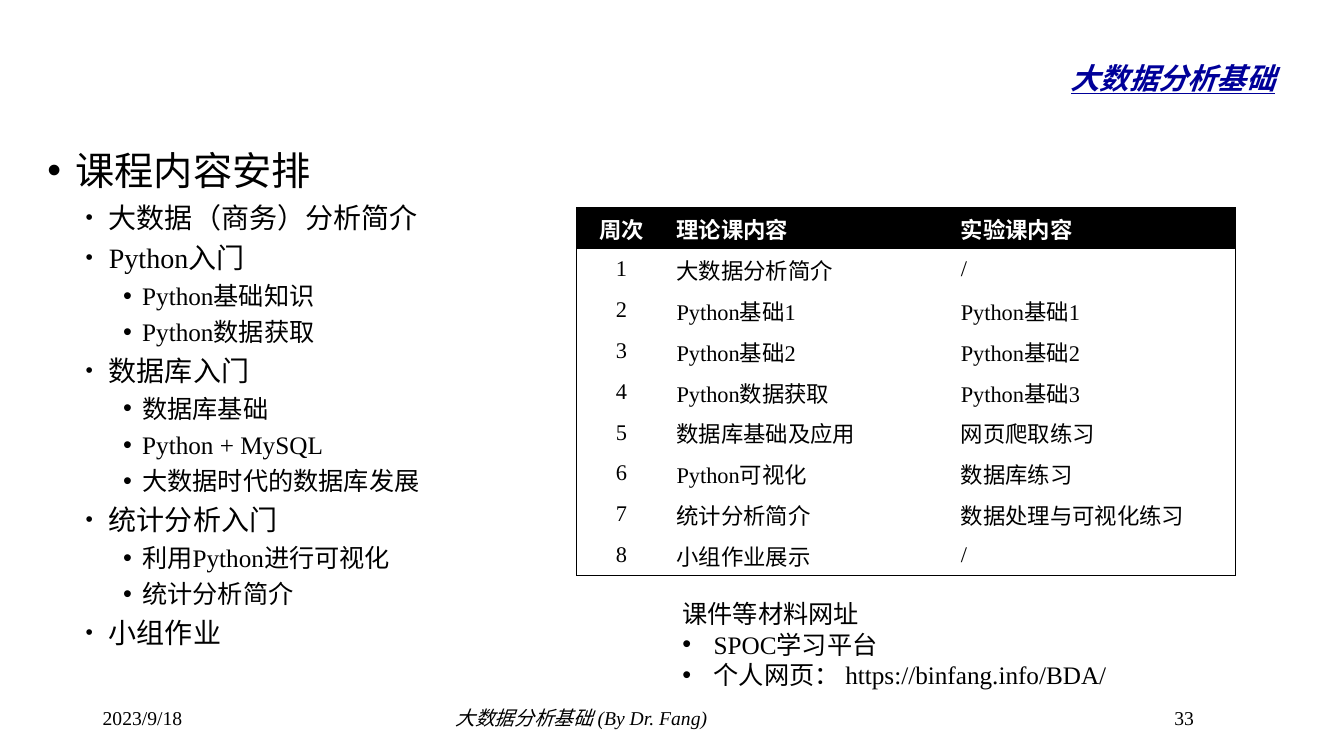
from dataclasses import dataclass

from lxml.etree import SubElement
from pptx import Presentation
from pptx.dml.color import RGBColor
from pptx.enum.text import MSO_ANCHOR, MSO_AUTO_SIZE, PP_ALIGN
from pptx.oxml.ns import qn
from pptx.util import Inches, Pt


@dataclass(frozen=True)
class Theme:
    font: str = "Times New Roman"
    ink: str = "000000"
    paper: str = "FFFFFF"
    heading: str = "000099"
    title: int = 36
    topic: int = 28
    section: int = 20
    detail: int = 18
    table: int = 16
    footer: int = 14
    border: float = 0.75


THEME = Theme()

OUTLINE_LEVELS = [
    (THEME.topic, 0.28, -0.28, 100),
    (THEME.section, 0.61, -0.23, 75),
    (THEME.detail, 0.94, -0.19, 100),
]
OUTLINE = [
    (0, "课程内容安排"),
    (1, "大数据（商务）分析简介"),
    (1, "Python入门"),
    (2, "Python基础知识"),
    (2, "Python数据获取"),
    (1, "数据库入门"),
    (2, "数据库基础"),
    (2, "Python + MySQL"),
    (2, "大数据时代的数据库发展"),
    (1, "统计分析入门"),
    (2, "利用Python进行可视化"),
    (2, "统计分析简介"),
    (1, "小组作业"),
]
SCHEDULE = [
    ("周次", "理论课内容", "实验课内容"),
    ("1", "大数据分析简介", "/"),
    ("2", "Python基础1", "Python基础1"),
    ("3", "Python基础2", "Python基础2"),
    ("4", "Python数据获取", "Python基础3"),
    ("5", "数据库基础及应用", "网页爬取练习"),
    ("6", "Python可视化", "数据库练习"),
    ("7", "统计分析简介", "数据处理与可视化练习"),
    ("8", "小组作业展示", "/"),
]
COLUMN_WIDTHS = [0.89, 2.82, 2.82]
MATERIALS = ["课件等材料网址", "SPOC学习平台", "个人网页： https://binfang.info/BDA/"]


def style(paragraph, size, color=THEME.ink, bold=False, italic=False):
    font = paragraph.font
    font.name = THEME.font
    font.size = Pt(size)
    font.color.rgb = RGBColor.from_string(color)
    font.bold = bold
    font.italic = italic


def add_bullet(paragraph, margin, indent, percent=100):
    properties = paragraph._p.get_or_add_pPr()
    properties.set("marL", str(Inches(margin)))
    properties.set("indent", str(Inches(indent)))
    SubElement(properties, qn("a:buSzPct"), val=str(percent * 1000))
    SubElement(properties, qn("a:buFont"), typeface="Arial")
    SubElement(properties, qn("a:buChar"), char="•")


def place(shape, left, top, width, height):
    shape.left, shape.top = Inches(left), Inches(top)
    shape.width, shape.height = Inches(width), Inches(height)


def fill_lines(frame, lines):
    for index, line in enumerate(lines):
        paragraph = frame.paragraphs[0] if index == 0 else frame.add_paragraph()
        paragraph.text = line
    return frame.paragraphs


def add_title(slide, text):
    title = slide.shapes.title
    place(title, 1.94, 0.05, 10.81, 1.1)
    title.text_frame.vertical_anchor = MSO_ANCHOR.MIDDLE
    title.text_frame.auto_size = MSO_AUTO_SIZE.NONE
    heading = title.text_frame.paragraphs[0]
    heading.alignment = PP_ALIGN.RIGHT
    run = heading.add_run()
    run.text = text
    run._r.get_or_add_rPr().set("baseline", "-25000")
    style(heading, THEME.title, THEME.heading, bold=True, italic=True)
    heading.font.underline = True


def add_outline(slide):
    body = slide.placeholders[1]
    place(body, 0.37, 1.31, 12.6, 5.59)
    body.text_frame.auto_size = MSO_AUTO_SIZE.NONE
    paragraphs = fill_lines(body.text_frame, [text for _, text in OUTLINE])
    for paragraph, (level, _) in zip(paragraphs, OUTLINE):
        size, margin, indent, percent = OUTLINE_LEVELS[level]
        paragraph.level = level
        add_bullet(paragraph, margin, indent, percent)
        paragraph.line_spacing = 1.2
        paragraph.space_before = Pt(0)
        style(paragraph, size)


def set_border(cell, edge, visible):
    properties = cell._tc.get_or_add_tcPr()
    line = SubElement(properties, qn(f"a:ln{edge}"), w=str(Pt(THEME.border)))
    if visible:
        fill = SubElement(line, qn("a:solidFill"))
        SubElement(fill, qn("a:srgbClr"), val=THEME.ink)
    else:
        SubElement(line, qn("a:noFill"))


def add_schedule(slide):
    last_row, last_column = len(SCHEDULE) - 1, len(COLUMN_WIDTHS) - 1
    schedule = slide.shapes.add_table(
        len(SCHEDULE), len(COLUMN_WIDTHS),
        Inches(5.72), Inches(2.06), Inches(sum(COLUMN_WIDTHS)), Inches(3.65),
    ).table
    schedule.first_row = schedule.horz_banding = False
    for column, width in zip(schedule.columns, COLUMN_WIDTHS):
        column.width = Inches(width)
    for row, entries in enumerate(SCHEDULE):
        header = row == 0
        for column, text in enumerate(entries):
            cell = schedule.cell(row, column)
            cell.text = text
            cell.vertical_anchor = MSO_ANCHOR.MIDDLE
            set_border(cell, "L", column == 0)
            set_border(cell, "R", column == last_column)
            set_border(cell, "T", header)
            set_border(cell, "B", row == last_row)
            if header:
                cell.fill.solid()
                cell.fill.fore_color.rgb = RGBColor.from_string(THEME.ink)
            else:
                cell.fill.background()
            entry = cell.text_frame.paragraphs[0]
            entry.alignment = PP_ALIGN.CENTER if column == 0 else PP_ALIGN.LEFT
            style(entry, THEME.table, THEME.paper if header else THEME.ink, bold=header)


def add_text(slide, bounds, lines, size, italic=False, bulleted=False):
    box = slide.shapes.add_textbox(*map(Inches, bounds))
    box.text_frame.word_wrap = True
    for index, paragraph in enumerate(fill_lines(box.text_frame, lines)):
        if bulleted and index > 0:
            add_bullet(paragraph, 0.31, -0.31)
        style(paragraph, size, italic=italic)


def main():
    deck = Presentation()
    deck.slide_width, deck.slide_height = Inches(13.33), Inches(7.5)
    slide = deck.slides.add_slide(deck.slide_layouts[1])
    add_title(slide, "大数据分析基础")
    add_outline(slide)
    add_text(slide, (11.55, 6.95, 0.87, 0.4), ["33"], THEME.footer)
    add_text(slide, (4.42, 6.95, 6.42, 0.4), ["大数据分析基础 (By Dr. Fang)"],
             THEME.footer, italic=True)
    add_text(slide, (0.92, 6.95, 3, 0.4), ["2023/9/18"], THEME.footer)
    add_schedule(slide)
    add_text(slide, (6.67, 5.89, 4.88, 1.01), MATERIALS, THEME.detail, bulleted=True)
    deck.save("out.pptx")


if __name__ == "__main__":
    main()
